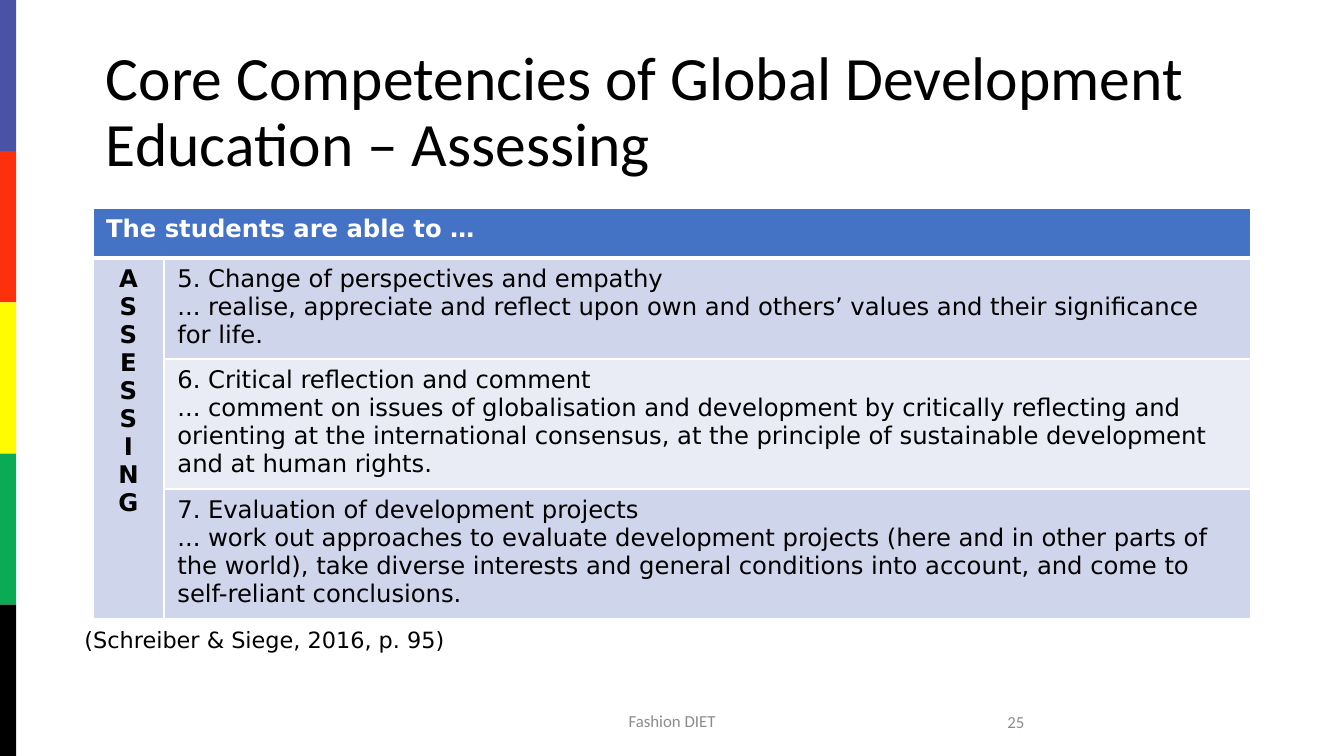
from copy import deepcopy
from dataclasses import dataclass

from lxml.etree import SubElement
from pptx import Presentation
from pptx.dml.color import RGBColor
from pptx.enum.shapes import MSO_SHAPE
from pptx.enum.text import MSO_ANCHOR, PP_ALIGN
from pptx.oxml.ns import qn
from pptx.util import Inches, Pt


@dataclass(frozen=True)
class Theme:
    heading_font: str = "Calibri"
    body_font: str = "DejaVu Sans"
    title_size: float = 33
    table_size: float = 13
    source_size: float = 12
    footer_size: float = 9
    black: str = "000000"
    white: str = "FFFFFF"
    gray: str = "8C8C8C"
    header: str = "4472C4"
    bands: tuple = ("CFD5EA", "E9EBF5")
    stripes: tuple = ("4952A4", "FC300D", "FFFB00", "0BAA54", "000000")


class SlideBuilder:
    def __init__(self, slide, theme):
        self.slide = slide
        self.theme = theme

    def stripes(self, width, slide_height):
        """Stack the coloured bars evenly down the left edge."""
        height = slide_height // len(self.theme.stripes)
        for index, color in enumerate(self.theme.stripes):
            bar = self.slide.shapes.add_shape(
                MSO_SHAPE.RECTANGLE, 0, index * height, Inches(width), height)
            bar.shadow.inherit = False
            bar.fill.solid()
            bar.fill.fore_color.rgb = RGBColor.from_string(color)
            bar.line.fill.background()

    def add_lines(self, para, text, font, size, color, bold=False):
        """Add one run per line, with line breaks of the same size between."""
        span = None
        for line in text.split("\n"):
            if span is not None:
                para.add_line_break()
                line_break = para._p.findall(qn("a:br"))[-1]
                line_break.append(deepcopy(span._r.rPr))
            span = para.add_run()
            span.text = line
            span.font.name = font
            span.font.size = Pt(size)
            span.font.bold = bold
            span.font.color.rgb = RGBColor.from_string(color)

    def text(self, place, text, font, size, color, align=PP_ALIGN.LEFT,
             anchor=MSO_ANCHOR.MIDDLE, spacing=None, wrap=True):
        box = self.slide.shapes.add_textbox(*map(Inches, place))
        frame = box.text_frame
        frame.word_wrap = wrap
        frame.vertical_anchor = anchor
        para = frame.paragraphs[0]
        para.alignment = align
        para.line_spacing = spacing
        self.add_lines(para, text, font, size, color)

    def borders(self, cell, **widths):
        """Draw white borders, 1 pt unless a side (L, R, T, B) says otherwise."""
        properties = cell._tc.get_or_add_tcPr()
        for side in "LRTB":
            line = SubElement(properties, qn(f"a:ln{side}"),
                              w=str(int(Pt(widths.get(side, 1)))))
            fill = SubElement(line, qn("a:solidFill"))
            SubElement(fill, qn("a:srgbClr"), val=self.theme.white)

    def cell(self, cell, paragraphs, fill, color, bold=False, align=PP_ALIGN.LEFT):
        cell.fill.solid()
        cell.fill.fore_color.rgb = RGBColor.from_string(fill)
        frame = cell.text_frame
        for index, text in enumerate(paragraphs):
            para = frame.add_paragraph() if index else frame.paragraphs[0]
            para.alignment = align
            self.add_lines(para, text, self.theme.body_font,
                           self.theme.table_size, color, bold)

    def competency_table(self, place, widths, heights, heading, label, items):
        theme = self.theme
        table = self.slide.shapes.add_table(
            len(heights), len(widths), *map(Inches, place)).table
        for column, width in zip(table.columns, widths):
            column.width = Inches(width)
        for index, height in enumerate(heights):
            table.rows[index].height = Inches(height)
            rule = {0: {"B": 3}, 1: {"T": 3}}.get(index, {})
            for column in range(len(widths)):
                self.borders(table.cell(index, column), **rule)
        table.cell(0, 0).merge(table.cell(0, 1))
        table.cell(1, 0).merge(table.cell(len(items), 0))
        self.cell(table.cell(0, 0), [heading], theme.header, theme.white, bold=True)
        self.cell(table.cell(1, 0), label, theme.bands[0], theme.black,
                  bold=True, align=PP_ALIGN.CENTER)
        for index, item in enumerate(items):
            self.cell(table.cell(index + 1, 1), [item],
                      theme.bands[index % 2], theme.black)


COMPETENCIES = [
    "5. Change of perspectives and empathy\n"
    "... realise, appreciate and reflect upon own and others’ values and their "
    "significance for life.",
    "6. Critical reflection and comment\n"
    "... comment on issues of globalisation and development by critically "
    "reflecting and orienting at the international consensus, at the principle "
    "of sustainable development and at human rights.",
    "7. Evaluation of development projects\n"
    "... work out approaches to evaluate development projects (here and in other "
    "parts of the world), take diverse interests and general conditions into "
    "account, and come to self-reliant conclusions.",
]


def main():
    deck = Presentation()
    deck.slide_width = Inches(10)
    deck.slide_height = deck.slide_width * 9 // 16
    theme = Theme()
    page = SlideBuilder(deck.slides.add_slide(deck.slide_layouts[6]), theme)

    page.stripes(0.12, deck.slide_height)
    page.text((0.69, 0.3, 8.62, 1.09),
              "Core Competencies of Global Development Education – Assessing",
              theme.heading_font, theme.title_size, theme.black, spacing=0.9)
    page.text((3.31, 5.21, 3.38, 0.3), "Fashion DIET", theme.heading_font,
              theme.footer_size, theme.gray, PP_ALIGN.CENTER)
    page.text((5.47, 5.22, 2.25, 0.3), "25", theme.heading_font,
              theme.footer_size, theme.gray, PP_ALIGN.RIGHT)
    page.competency_table((0.69, 1.55, 8.62, 2.59), (0.53, 8.09),
                          (0.37, 0.53, 0.75, 0.94), "The students are able to …",
                          "ASSESSING", COMPETENCIES)
    page.text((0.53, 4.61, 3.05, 0.3), "(Schreiber & Siege, 2016, p. 95)",
              theme.body_font, theme.source_size, theme.black,
              anchor=MSO_ANCHOR.TOP, wrap=False)
    deck.save("out.pptx")


if __name__ == "__main__":
    main()
